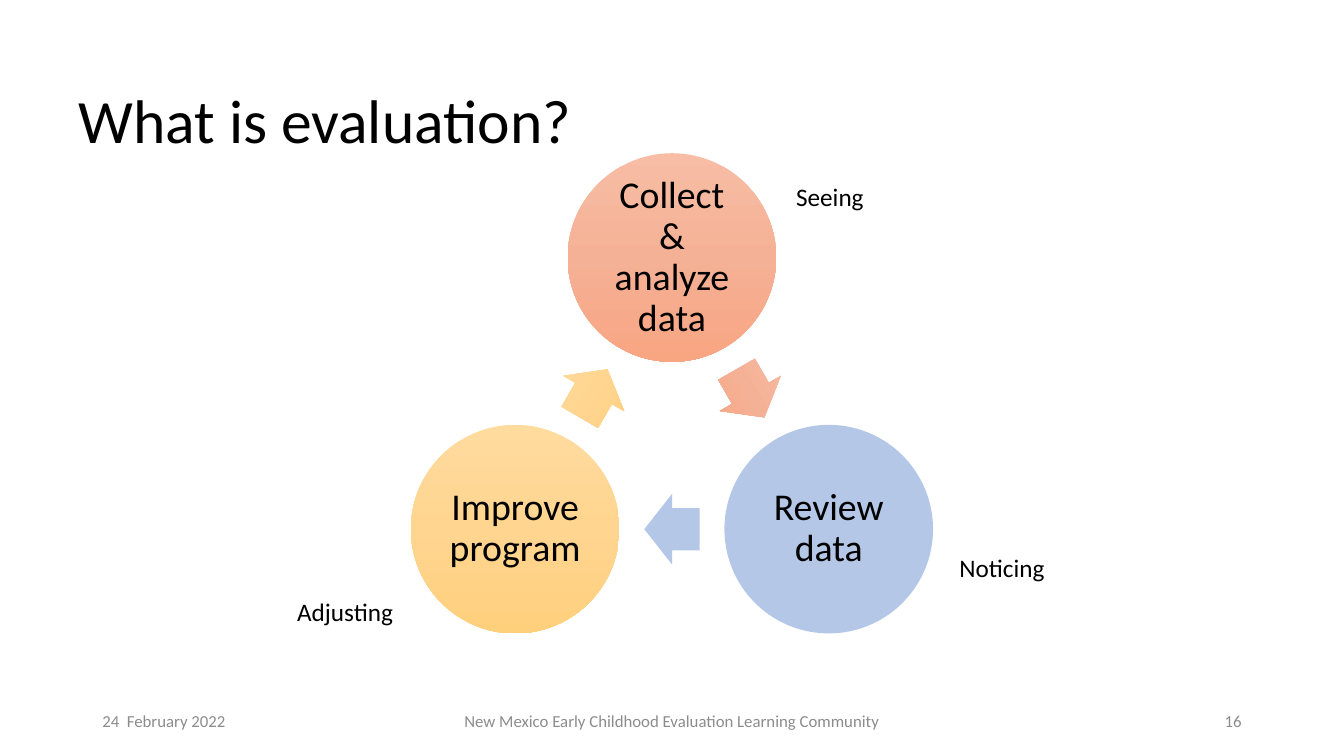
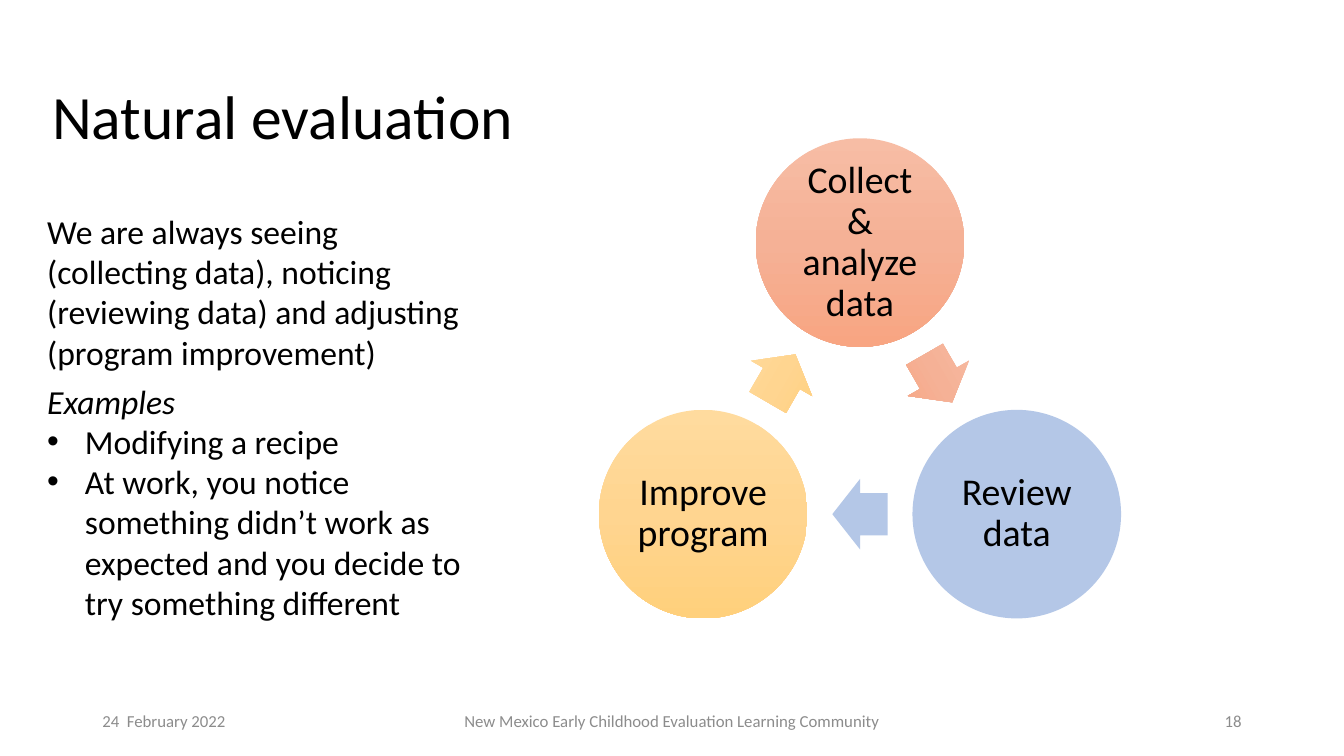
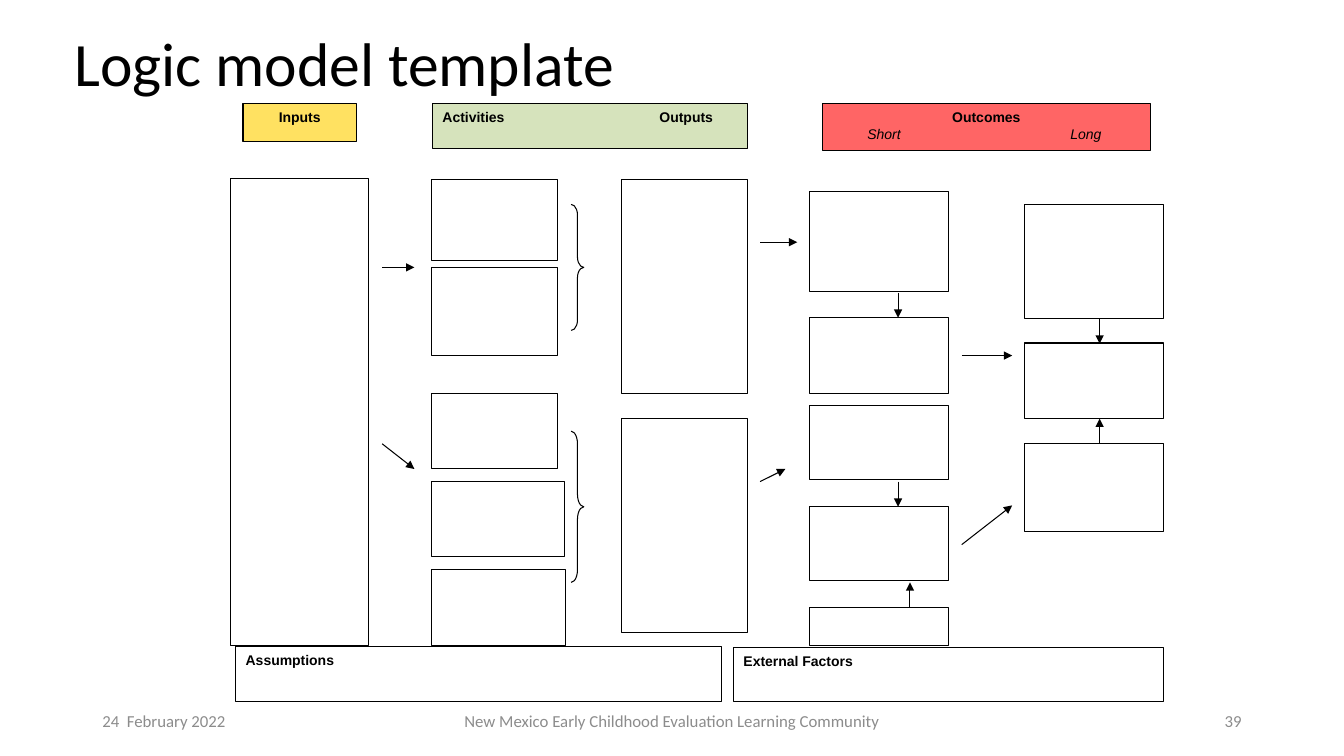
from copy import deepcopy
from dataclasses import dataclass
from math import cos, radians, sin, sqrt

from lxml.etree import SubElement
from pptx import Presentation
from pptx.dml.color import RGBColor
from pptx.enum.shapes import MSO_CONNECTOR, MSO_SHAPE
from pptx.enum.text import MSO_ANCHOR, PP_ALIGN
from pptx.oxml.ns import qn
from pptx.shapes.autoshape import Shape
from pptx.slide import Slide
from pptx.text.text import TextFrame, _Paragraph
from pptx.util import Pt

BLACK = RGBColor(0x00, 0x00, 0x00)
WHITE = RGBColor(0xFF, 0xFF, 0xFF)
GREY = RGBColor(0x8C, 0x8C, 0x8C)
YELLOW = RGBColor(0xFF, 0xE1, 0x61)
GREEN = RGBColor(0xD6, 0xE3, 0xBC)
RED = RGBColor(0xFF, 0x65, 0x65)
ORANGE_STOPS = (RGBColor(0xF7, 0xBD, 0xA5), RGBColor(0xF5, 0xB1, 0x96), RGBColor(0xF8, 0xA5, 0x82))
BLUE_STOPS = (RGBColor(0xB4, 0xC7, 0xE7),)
GOLD_STOPS = (RGBColor(0xFF, 0xDB, 0x9E), RGBColor(0xFF, 0xD5, 0x90), RGBColor(0xFF, 0xD0, 0x7C))

BODY_FONT = "Calibri"
DIAGRAM_FONT = "Arial"
LINE_WIDTH = 0.75
BULLET_INDENT = 27

CIRCLE_SIZE = 149
CIRCLE_SPACING = 224
ARROW_WIDTH, ARROW_HEIGHT = 39.6, 50.4


@dataclass(frozen=True)
class Box:
    left: float
    top: float
    width: float
    height: float


@dataclass(frozen=True)
class Line:
    text: str
    size: float
    font: str = BODY_FONT
    color: RGBColor = BLACK
    bold: bool = False
    italic: bool = False
    align: PP_ALIGN = PP_ALIGN.LEFT
    spacing: float = 1.0
    space_after: float = 0
    bullet: bool = False
    tabs: tuple[float, ...] = ()


@dataclass(frozen=True)
class Step:
    text: str
    stops: tuple[RGBColor, ...]


@dataclass(frozen=True)
class Label:
    text: str
    box: Box


@dataclass(frozen=True)
class Panel:
    box: Box
    fill: RGBColor
    lines: tuple[Line, ...]


@dataclass(frozen=True)
class Column:
    left: float
    width: float
    spans: tuple[tuple[float, float], ...]


@dataclass(frozen=True)
class Arrow:
    start: tuple[float, float]
    end: tuple[float, float]


@dataclass(frozen=True)
class Brace:
    box: Box
    curve: float


def heading(text: str, **options) -> Line:
    return Line(text, 10, DIAGRAM_FONT, **options)


STEPS = (
    Step("Collect & analyze data", ORANGE_STOPS),
    Step("Review data", BLUE_STOPS),
    Step("Improve program", GOLD_STOPS),
)

CYCLE_LABELS = (
    Label("Seeing", Box(561.6, 126, 63.4, 29)),
    Label("Noticing", Box(678.2, 391, 76.3, 29)),
    Label("Adjusting", Box(205.2, 422.6, 83.5, 29)),
)

EXAMPLE_LINES = (
    Line(
        "We are always seeing (collecting data), noticing (reviewing data) "
        "and adjusting (program improvement)",
        24,
        space_after=6,
    ),
    Line("Examples", 24, italic=True),
    Line("Modifying a recipe", 24, bullet=True),
    Line(
        "At work, you notice something didn’t work as expected "
        "and you decide to try something different",
        24,
        bullet=True,
    ),
)

COLUMNS = (
    Column(165, 98.6, ((127.4, 333.4),)),
    Column(308.5, 90, ((128.2, 57.6), (191, 63.2), (281, 54))),
    Column(308.5, 94.5, ((343.6, 54),)),
    Column(308.5, 95.5, ((407, 54),)),
    Column(444, 90, ((128.2, 153), (299, 153))),
    Column(578.5, 99, ((136.8, 71.4), (227, 54), (289.5, 53), (361.5, 53), (433.7, 27.4))),
    Column(732, 99, ((146, 81.4), (245, 54), (317, 63))),
)

PANELS = (
    Panel(Box(173.6, 74, 81, 27.2), YELLOW,
          (heading("Inputs", bold=True, align=PP_ALIGN.CENTER),)),
    Panel(Box(309, 74, 225, 32.2), GREEN,
          (heading("Activities\tOutputs", bold=True, tabs=(155,)),)),
    Panel(Box(587.5, 74, 234, 33.4), RED,
          (heading("Outcomes", bold=True, align=PP_ALIGN.CENTER),
           heading("\tShort\tLong", italic=True, tabs=(25, 170)))),
    Panel(Box(168.4, 461.6, 347, 39.4), WHITE, (heading("Assumptions", bold=True),)),
    Panel(Box(524, 462.2, 307, 38.8), WHITE, (heading("External Factors", bold=True),)),
)

ARROWS = (
    Arrow((273, 191), (296, 191)),
    Arrow((273, 317), (296, 335)),
    Arrow((543, 173), (569.5, 173)),
    Arrow((543, 344), (561, 335)),
    Arrow((641.5, 209), (641.5, 227)),
    Arrow((641.5, 344), (641.5, 362)),
    Arrow((650, 434), (650, 416)),
    Arrow((687, 254), (723, 254)),
    Arrow((687, 389), (723, 361)),
    Arrow((785.5, 227.5), (785.5, 245.5)),
    Arrow((785.5, 317), (785.5, 299)),
)

BRACES = (
    Brace(Box(408, 146, 9, 90), 0.83),
    Brace(Box(408, 308, 9, 108), 1),
)


def format_paragraph(paragraph: _Paragraph, line: Line) -> None:
    paragraph.text = line.text
    properties = paragraph._p.get_or_add_pPr()
    if line.bullet:
        properties.set("marL", str(Pt(BULLET_INDENT)))
        properties.set("indent", str(-Pt(BULLET_INDENT)))
        SubElement(properties, qn("a:buFont"), typeface="Arial")
        SubElement(properties, qn("a:buChar"), char="•")
    if line.tabs:
        tab_list = SubElement(properties, qn("a:tabLst"))
        for position in line.tabs:
            SubElement(tab_list, qn("a:tab"), pos=str(Pt(position)), algn="l")
    paragraph.alignment = line.align
    paragraph.line_spacing = line.spacing
    paragraph.space_after = Pt(line.space_after)
    for run in paragraph.runs:
        run.font.name = line.font
        run.font.size = Pt(line.size)
        run.font.bold = line.bold
        run.font.italic = line.italic
        run.font.color.rgb = line.color


def write_lines(text_frame: TextFrame, lines: tuple[Line, ...], anchor: MSO_ANCHOR) -> None:
    text_frame.vertical_anchor = anchor
    for index, line in enumerate(lines):
        paragraph = text_frame.add_paragraph() if index else text_frame.paragraphs[0]
        format_paragraph(paragraph, line)


def add_text(
    slide: Slide,
    box: Box,
    *lines: Line,
    anchor: MSO_ANCHOR = MSO_ANCHOR.MIDDLE,
    wrap: bool = True,
) -> None:
    shape = slide.shapes.add_textbox(Pt(box.left), Pt(box.top), Pt(box.width), Pt(box.height))
    shape.text_frame.word_wrap = wrap
    write_lines(shape.text_frame, lines, anchor)


def add_preset(slide: Slide, preset: MSO_SHAPE, box: Box) -> Shape:
    shape = slide.shapes.add_shape(
        preset, Pt(box.left), Pt(box.top), Pt(box.width), Pt(box.height)
    )
    shape.shadow.inherit = False
    return shape


def outline(shape: Shape) -> None:
    shape.line.color.rgb = BLACK
    shape.line.width = Pt(LINE_WIDTH)


def add_rectangle(slide: Slide, box: Box, color: RGBColor = WHITE) -> Shape:
    shape = add_preset(slide, MSO_SHAPE.RECTANGLE, box)
    shape.fill.solid()
    shape.fill.fore_color.rgb = color
    outline(shape)
    return shape


def fill_stops(shape: Shape, colors: tuple[RGBColor, ...]) -> None:
    shape.line.fill.background()
    if len(colors) == 1:
        shape.fill.solid()
        shape.fill.fore_color.rgb = colors[0]
        return
    shape.fill.gradient()
    shape.fill.gradient_angle = 270
    stop_list = shape._element.spPr.find(qn("a:gradFill")).find(qn("a:gsLst"))
    while len(stop_list) < len(colors):
        stop_list.append(deepcopy(stop_list[-1]))
    for index, (stop, color) in enumerate(zip(shape.fill.gradient_stops, colors)):
        stop.position = index / (len(colors) - 1)
        stop.color.rgb = color


def centred_box(
    center: tuple[float, float], radius: float, angle: float, width: float, height: float
) -> Box:
    x = center[0] + radius * cos(radians(angle))
    y = center[1] + radius * sin(radians(angle))
    return Box(x - width / 2, y - height / 2, width, height)


def add_cycle(slide: Slide, center: tuple[float, float]) -> None:
    radius = CIRCLE_SPACING / sqrt(3)
    for index, step in enumerate(STEPS):
        angle = 120 * index - 90
        circle = add_preset(
            slide, MSO_SHAPE.OVAL, centred_box(center, radius, angle, CIRCLE_SIZE, CIRCLE_SIZE)
        )
        fill_stops(circle, step.stops)
        text_frame = circle.text_frame
        text_frame.margin_left = text_frame.margin_right = Pt(3)
        text_frame.margin_top = text_frame.margin_bottom = Pt(3)
        line = Line(step.text, 27, align=PP_ALIGN.CENTER, spacing=0.9)
        write_lines(text_frame, (line,), MSO_ANCHOR.MIDDLE)

        arrow = add_preset(
            slide,
            MSO_SHAPE.RIGHT_ARROW,
            centred_box(center, radius / 2, angle + 60, ARROW_WIDTH, ARROW_HEIGHT),
        )
        arrow.adjustments[0] = 0.6
        arrow.adjustments[1] = 0.5
        arrow.rotation = 60 + 120 * index
        fill_stops(arrow, step.stops)


def add_arrow(slide: Slide, arrow: Arrow) -> None:
    connector = slide.shapes.add_connector(
        MSO_CONNECTOR.STRAIGHT, *(Pt(value) for value in arrow.start + arrow.end)
    )
    outline(connector)
    SubElement(connector.line._get_or_add_ln(), qn("a:tailEnd"), type="triangle")
    SubElement(connector._element.spPr, qn("a:effectLst"))


def add_brace(slide: Slide, brace: Brace) -> None:
    shape = add_preset(slide, MSO_SHAPE.RIGHT_BRACE, brace.box)
    shape.adjustments[0] = brace.curve
    shape.adjustments[1] = 0.5
    shape.fill.background()
    outline(shape)


def add_base_slide(presentation: Presentation, title: str, title_box: Box, number: int) -> Slide:
    slide = presentation.slides.add_slide(presentation.slide_layouts[6])
    add_text(slide, title_box, Line(title, 44, spacing=0.9))
    footers = (
        ("24  February 2022", 66, 216, PP_ALIGN.LEFT),
        ("New Mexico Early Childhood Evaluation Learning Community", 318, 324, PP_ALIGN.CENTER),
        (str(number), 678, 216, PP_ALIGN.RIGHT),
    )
    for text, left, width, align in footers:
        add_text(slide, Box(left, 500.5, width, 28.8), Line(text, 12, color=GREY, align=align))
    return slide


def build_evaluation_slide(presentation: Presentation) -> None:
    slide = add_base_slide(presentation, "What is evaluation?", Box(49, 36, 612, 104.4), 16)
    add_cycle(slide, (480, 313.3))
    for label in CYCLE_LABELS:
        add_text(slide, label.box, Line(label.text, 18), anchor=MSO_ANCHOR.TOP, wrap=False)


def build_natural_slide(presentation: Presentation) -> None:
    slide = add_base_slide(presentation, "Natural evaluation", Box(30.2, 33, 612, 104.4), 18)
    add_cycle(slide, (614.3, 302.6))
    add_text(slide, Box(26.6, 147, 327, 304), *EXAMPLE_LINES, anchor=MSO_ANCHOR.TOP)


def build_logic_slide(presentation: Presentation) -> None:
    slide = add_base_slide(presentation, "Logic model template", Box(46, 16.6, 620.6, 61.2), 39)
    for column in COLUMNS:
        for top, height in column.spans:
            add_rectangle(slide, Box(column.left, top, column.width, height))
    for panel in PANELS:
        shape = add_rectangle(slide, panel.box, panel.fill)
        write_lines(shape.text_frame, panel.lines, MSO_ANCHOR.TOP)
    for arrow in ARROWS:
        add_arrow(slide, arrow)
    for brace in BRACES:
        add_brace(slide, brace)


def main() -> None:
    presentation = Presentation()
    presentation.slide_width = Pt(960)
    presentation.slide_height = Pt(540)
    build_evaluation_slide(presentation)
    build_natural_slide(presentation)
    build_logic_slide(presentation)
    presentation.save("out.pptx")


if __name__ == "__main__":
    main()
